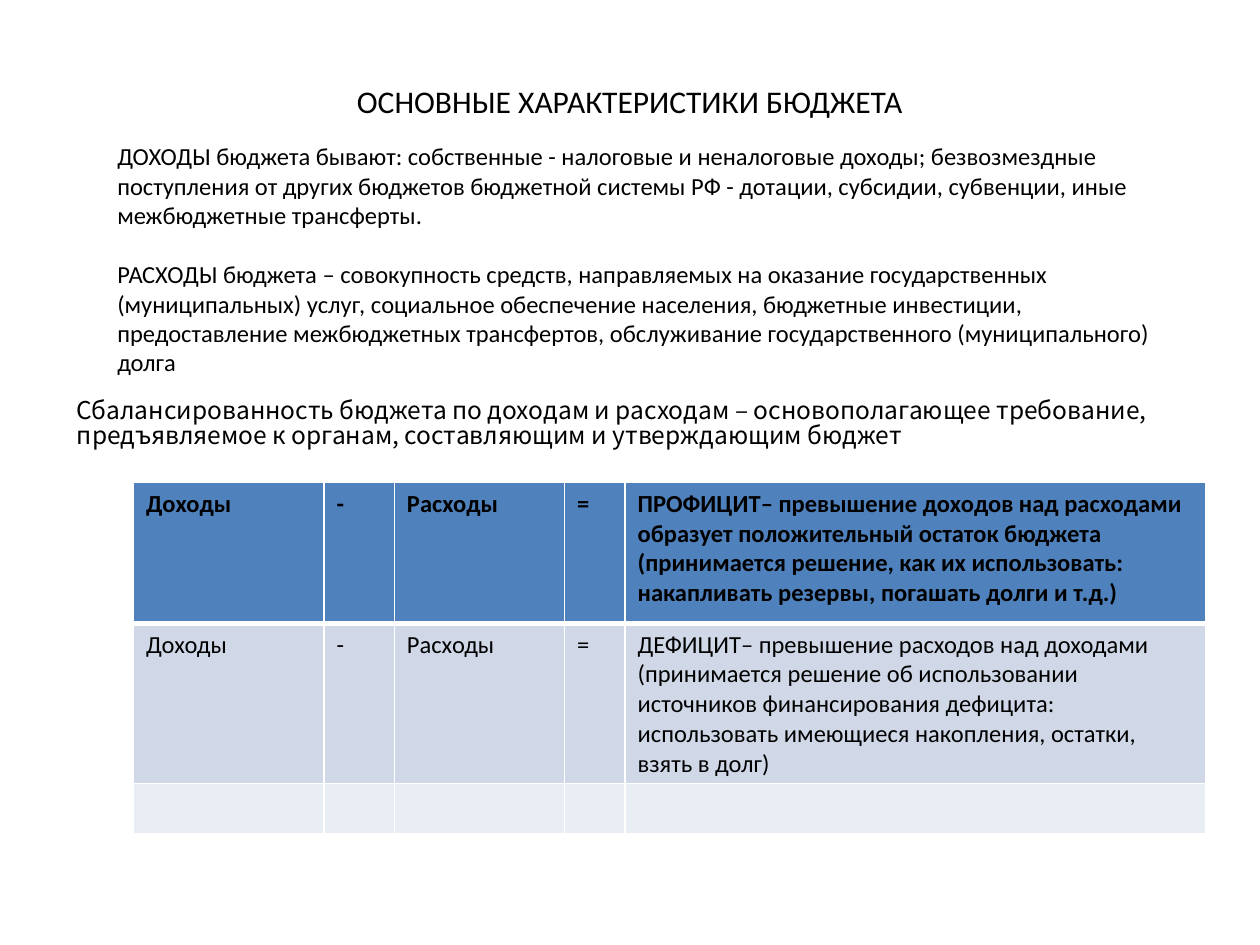
from dataclasses import dataclass

from lxml import etree
from pptx import Presentation
from pptx import dml
from pptx import util as u
from pptx.dml import color
from pptx.enum import text
from pptx.oxml import ns
from pptx.shapes.autoshape import Shape
from pptx.slide import Slide
from pptx.table import _Cell

COLORS = {
    "ink": "000000",
    "border": "FFFFFF",
    "header": "4F81BD",
    "deficit": "D0D8E8",
    "empty": "E9EDF4",
}


@dataclass(frozen=True)
class TextBlock:
    left: float
    top: float
    width: float
    height: float
    paragraphs: tuple[str, ...]
    size: float = 14
    font: str = "Calibri"
    align: text.PP_ALIGN = text.PP_ALIGN.LEFT
    line_spacing: float = 1.0
    gap: float = 0


@dataclass(frozen=True)
class BalanceRow:
    height: float
    fill: str
    result: str = ""
    bold: bool = False
    top_line: float = 1
    bottom_line: float = 1

    def texts(self) -> tuple[str, ...]:
        if not self.result:
            return ("",) * 5
        return ("Доходы", "-", "Расходы", "=", self.result)


HEADING = TextBlock(
    1.9, 1.52, 21.59, 1.02, ("ОСНОВНЫЕ ХАРАКТЕРИСТИКИ БЮДЖЕТА",),
    size=18, align=text.PP_ALIGN.CENTER,
)
DEFINITIONS = TextBlock(
    2.11, 2.72, 21.79, 5.05,
    (
        "ДОХОДЫ бюджета бывают: собственные - налоговые и неналоговые доходы; "
        "безвозмездные поступления от других бюджетов бюджетной системы РФ - "
        "дотации, субсидии, субвенции, иные межбюджетные трансферты.",
        "РАСХОДЫ бюджета – совокупность средств, направляемых на оказание "
        "государственных (муниципальных) услуг, социальное обеспечение населения, "
        "бюджетные инвестиции, предоставление межбюджетных трансфертов, "
        "обслуживание государственного (муниципального) долга",
    ),
    gap=17,
)
BALANCE_RULE = TextBlock(
    1.3, 7.92, 22.61, 14.02,
    (
        "Сбалансированность бюджета по доходам и расходам – основополагающее "
        "требование, предъявляемое к органам, составляющим и утверждающим бюджет",
    ),
    font="Noto Sans CJK KR", line_spacing=0.85,
)
COLUMN_WIDTHS = (3.84, 1.42, 3.43, 1.22, 11.71)
BALANCE_ROWS = (
    BalanceRow(
        2.84, "header",
        "ПРОФИЦИТ– превышение доходов над расходами образует положительный "
        "остаток бюджета (принимается решение, как их использовать: "
        "накапливать резервы, погашать долги и т.д.)",
        bold=True, bottom_line=3,
    ),
    BalanceRow(
        2.84, "deficit",
        "ДЕФИЦИТ– превышение расходов над доходами (принимается решение об "
        "использовании источников финансирования дефицита: использовать "
        "имеющиеся накопления, остатки, взять в долг)",
        top_line=3,
    ),
    BalanceRow(0.89, "empty"),
)


def rgb(name: str) -> color.RGBColor:
    return color.RGBColor.from_string(COLORS[name])


def format_runs(paragraph, size: float, font: str, bold: bool = False) -> None:
    for run in paragraph.runs:
        run.font.size = u.Pt(size)
        run.font.name = font
        run.font.bold = bold
        run.font.color.rgb = rgb("ink")


def fill_block(holder: Shape, block: TextBlock) -> None:
    holder.left, holder.top = u.Cm(block.left), u.Cm(block.top)
    holder.width, holder.height = u.Cm(block.width), u.Cm(block.height)
    frame = holder.text_frame
    frame.text = "\n".join(block.paragraphs)
    frame.word_wrap = True
    frame.auto_size = text.MSO_AUTO_SIZE.SHAPE_TO_FIT_TEXT
    frame.vertical_anchor = text.MSO_ANCHOR.TOP
    for index, paragraph in enumerate(frame.paragraphs):
        properties = paragraph._p.get_or_add_pPr()
        properties.set("marL", "0")
        properties.set("indent", "0")
        etree.SubElement(properties, ns.qn("a:buNone"))
        paragraph.alignment = block.align
        paragraph.line_spacing = block.line_spacing
        paragraph.space_before = u.Pt(block.gap if index else 0)
        format_runs(paragraph, block.size, block.font)


def add_border(cell: _Cell, side: str, width: float) -> None:
    properties = cell._tc.get_or_add_tcPr()
    line = etree.SubElement(properties, ns.qn(f"a:{side}"), w=str(u.Pt(width)))
    solid = etree.SubElement(line, ns.qn("a:solidFill"))
    etree.SubElement(solid, ns.qn("a:srgbClr"), val=COLORS["border"])


def fill_cell(cell: _Cell, wording: str, row: BalanceRow) -> None:
    sides = {"lnL": 1, "lnR": 1, "lnT": row.top_line, "lnB": row.bottom_line}
    for side, width in sides.items():
        add_border(cell, side, width)
    cell.fill.solid()
    cell.fill.fore_color.rgb = rgb(row.fill)
    cell.text_frame.text = wording
    format_runs(cell.text_frame.paragraphs[0], 14, "Calibri", row.bold)


def add_balance_table(slide: Slide) -> None:
    balance = slide.shapes.add_table(
        len(BALANCE_ROWS), len(COLUMN_WIDTHS), u.Cm(2.69), u.Cm(9.73),
        u.Cm(sum(COLUMN_WIDTHS)), u.Cm(sum(row.height for row in BALANCE_ROWS)),
    ).table
    for column, width in zip(balance.columns, COLUMN_WIDTHS):
        column.width = u.Cm(width)
    for table_row, row in zip(balance.rows, BALANCE_ROWS):
        table_row.height = u.Cm(row.height)
        for cell, wording in zip(table_row.cells, row.texts()):
            fill_cell(cell, wording, row)


def main() -> None:
    deck = Presentation()
    deck.slide_width, deck.slide_height = u.Cm(25.4), u.Cm(19.05)
    slide = deck.slides.add_slide(deck.slide_layouts[1])
    fill_block(slide.shapes.title, HEADING)
    fill_block(slide.placeholders[1], DEFINITIONS)
    rule_box = slide.shapes.add_textbox(0, 0, 0, 0)
    fill_block(rule_box, BALANCE_RULE)
    add_balance_table(slide)
    deck.save("out.pptx")


if __name__ == "__main__":
    main()
